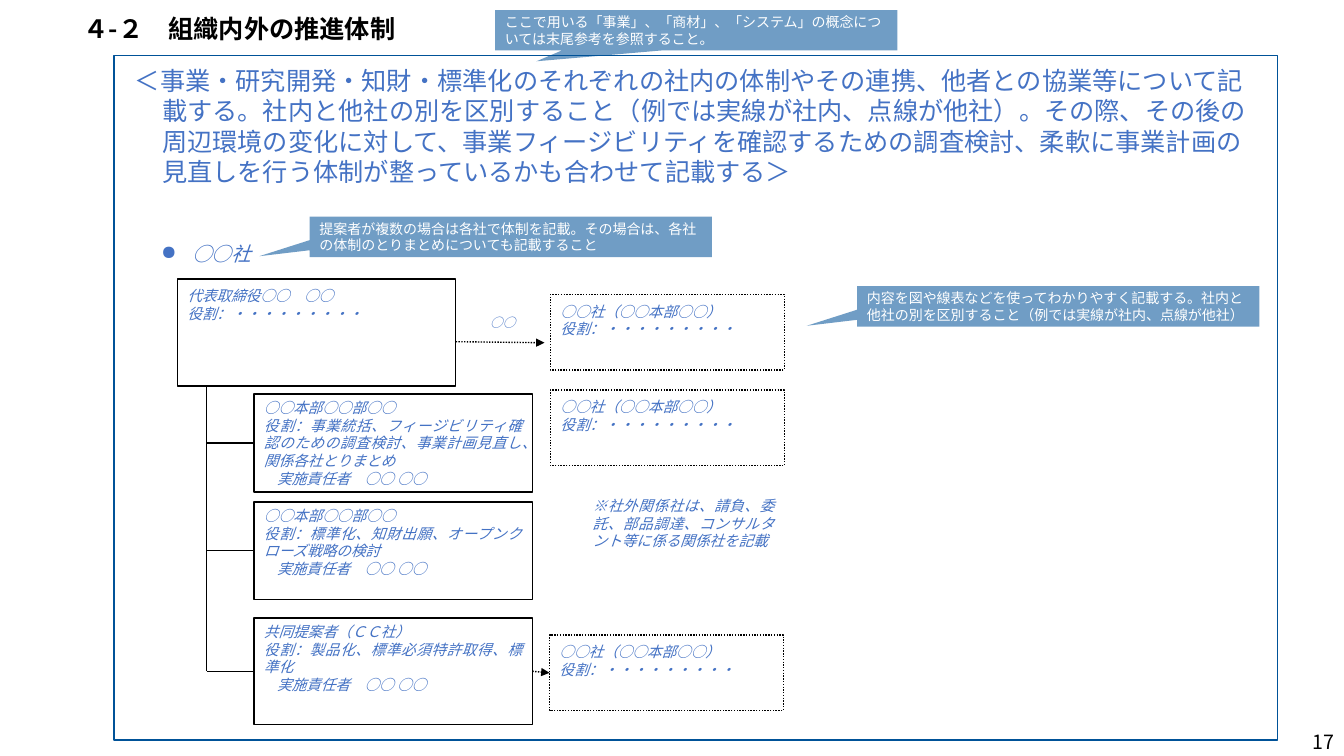
from lxml import etree
from pptx import Presentation, util as u
from pptx.dml.color import RGBColor
from pptx.enum import dml, shapes, text
from pptx.oxml.ns import qn

COLORS = {"ink": "000000", "paper": "FFFFFF", "guide": "4472C4", "navy": "005298"}
JAPANESE = "Noto Sans CJK JP"
LEFT, CENTER, RIGHT, JUSTIFY = (
    text.PP_ALIGN.LEFT, text.PP_ALIGN.CENTER, text.PP_ALIGN.RIGHT, text.PP_ALIGN.JUSTIFY)
TOP, MIDDLE = text.MSO_ANCHOR.TOP, text.MSO_ANCHOR.MIDDLE


class SlideBuilder:
    def __init__(self, slide):
        self.slide = slide

    def color(self, name):
        return RGBColor.from_string(COLORS[name])

    def style_line(self, line, width, dotted=False):
        line.color.rgb = self.color("ink")
        line.width = u.Pt(width)
        if dotted:
            line.dash_style = dml.MSO_LINE.ROUND_DOT

    def set_text(self, frame, lines, size, color="guide", font=JAPANESE, align=JUSTIFY,
                 anchor=TOP, italic=False, bold=False, top_inset=0.05):
        frame.word_wrap = True
        frame.vertical_anchor = anchor
        frame.margin_top = u.Inches(top_inset)
        frame.text = "\n".join(lines)
        for paragraph in frame.paragraphs:
            paragraph.alignment = align
            paragraph.font.size = u.Pt(size)
            paragraph.font.italic = italic
            paragraph.font.bold = bold
            paragraph.font.color.rgb = self.color(color)
            paragraph.font.name = font
            defaults = paragraph._p.get_or_add_pPr().find(qn("a:defRPr"))
            etree.SubElement(defaults, qn("a:ea"), typeface=JAPANESE)

    def indent(self, paragraph, margin, first, bullet=None):
        props = paragraph._p.get_or_add_pPr()
        props.set("marL", str(u.Inches(margin)))
        props.set("indent", str(u.Inches(first)))
        if bullet:
            mark = etree.Element(qn("a:buChar"), char=bullet)
            props.find(qn("a:defRPr")).addprevious(mark)

    def label(self, at, content, size, **style):
        box = self.slide.shapes.add_textbox(*map(u.Inches, at))
        self.set_text(box.text_frame, [content], size, **style)
        return box.text_frame.paragraphs[0]

    def shape(self, kind, at):
        shape = self.slide.shapes.add_shape(kind, *map(u.Inches, at))
        shape.shadow.inherit = False
        return shape

    def outline(self, at):
        frame = self.shape(shapes.MSO_SHAPE.RECTANGLE, at)
        frame.fill.background()
        frame.line.color.rgb = self.color("navy")
        frame.line.width = u.Pt(1)

    def box(self, at, lines, dotted=False, filled=False, top_inset=0.08):
        box = self.shape(shapes.MSO_SHAPE.RECTANGLE, at)
        if filled:
            box.fill.solid()
            box.fill.fore_color.rgb = self.color("paper")
        else:
            box.fill.background()
        self.style_line(box.line, 1, dotted)
        self.set_text(box.text_frame, lines, 10.5, italic=True, top_inset=top_inset)
        return box

    def department(self, top, height, name, role):
        lines = [name, role, "実施責任者　○○ ○○"]
        box = self.box((2.52, top, 2.76, height), lines, filled=True, top_inset=0.05)
        self.indent(box.text_frame.paragraphs[-1], 0, 0.13)
        return box

    def outside_company(self, left, top):
        lines = ["○○社（○○本部○○）", "役割：・・・・・・・・・"]
        return self.box((left, top, 2.32, 0.75), lines, dotted=True)

    def callout(self, left, top, tip, content):
        callout = self.shape(shapes.MSO_SHAPE.RECTANGULAR_CALLOUT, (left, top, 3.99, 0.4))
        callout.adjustments[0], callout.adjustments[1] = tip
        callout.fill.solid()
        callout.fill.fore_color.rgb = self.color("navy")
        tint = callout._element.spPr.find(qn("a:solidFill"))[0]
        etree.SubElement(tint, qn("a:alpha"), val="56000")
        callout.line.fill.background()
        self.set_text(callout.text_frame, [content], 10, "paper", "Arial", LEFT, MIDDLE)

    def connector(self, start, end, width=0.75, arrow=False):
        line = self.slide.shapes.add_connector(
            shapes.MSO_CONNECTOR.STRAIGHT, *map(u.Inches, start + end))
        self.style_line(line.line, width, arrow)
        if arrow:
            outline = line._element.spPr.find(qn("a:ln"))
            etree.SubElement(outline, qn("a:tailEnd"), type="triangle")
        etree.SubElement(line._element.spPr, qn("a:effectLst"))
        return line

    def branch(self, trunk, department):
        middle = (department.top + department.height / 2) / u.Inches(1)
        line = self.connector((trunk, middle), (2.52, middle))
        line.end_connect(department, 1)


def main():
    deck = Presentation()
    deck.slide_width, deck.slide_height = u.Inches(13.33), u.Inches(7.5)
    page = SlideBuilder(deck.slides.add_slide(deck.slide_layouts[6]))

    page.label((12.48, 7.21, 0.85, 0.29), "17", 14, color="ink", align=RIGHT, anchor=MIDDLE)
    instruction = page.label(
        (0.45, 0.6, 12.21, 1.31),
        "＜事業・研究開発・知財・標準化のそれぞれの社内の体制やその連携、他者との協業等について"
        "記載する。社内と他社の別を区別すること（例では実線が社内、点線が他社）。その際、その後の"
        "周辺環境の変化に対して、事業フィージビリティを確認するための調査検討、柔軟に事業計画の"
        "見直しを行う体制が整っているかも合わせて記載する＞", 18, align=LEFT)
    instruction.space_before = u.Pt(6)
    page.indent(instruction, 1.06, -0.27)
    page.callout(8.5, 2.84, (-0.625, 0.481),
                 "内容を図や線表などを使ってわかりやすく記載する。社内と他社の別を区別すること"
                 "（例では実線が社内、点線が他社）")
    page.outline((1.13, 0.55, 11.54, 6.79))

    page.box((1.76, 2.77, 2.76, 1.06), ["代表取締役○○　○○", "役割：・・・・・・・・・"])
    planning = page.department(
        3.91, 0.97, "○○本部○○部○○",
        "役割：事業統括、フィージビリティ確認のための調査検討、事業計画見直し、関係各社とりまとめ")
    standards = page.department(
        4.98, 0.97, "○○本部○○部○○",
        "役割：標準化、知財出願、オープンクローズ戦略の検討")
    partner = page.department(
        6.13, 1.06, "共同提案者（ＣＣ社）",
        "役割：製品化、標準必須特許取得、標準化")

    trunk = 2.05
    page.connector((trunk, 3.83), (trunk, 6.66))
    for department in (planning, standards, partner):
        page.branch(trunk, department)

    for top in (2.92, 3.87):
        page.outside_company(5.46, top)
    supplier = page.outside_company(5.45, 6.3)
    page.connector((4.52, 3.39), (5.4, 3.4), 1, arrow=True)
    supply = page.connector((5.28, 6.66), (5.45, 6.67), 1, arrow=True)
    supply.begin_connect(partner, 3)
    supply.end_connect(supplier, 1)

    page.label((4.53, 3.05, 0.91, 0.3), "○○", 9, align=CENTER, anchor=MIDDLE, italic=True)
    company = page.label((1.5, 2.35, 1.43, 0.34), "○○社", 14, italic=True)
    page.indent(company, 0.31, -0.31, "●")
    page.callout(3.07, 2.15, (-0.625, 0.481),
                 "提案者が複数の場合は各社で体制を記載。その場合は、各社の体制のとりまとめについても"
                 "記載すること")
    page.callout(4.91, 0.1, (-0.397, 0.771),
                 "ここで用いる「事業」、「商材」、「システム」の概念については末尾参考を参照すること。")
    title = page.label((0.73, 0.11, 11.5, 0.38), "４-２　組織内外の推進体制", 18,
                       color="ink", align=LEFT, anchor=MIDDLE, bold=True)
    title.line_spacing = 0.9
    page.label((5.78, 4.88, 2, 0.86),
               "※社外関係社は、請負、委託、部品調達、コンサルタント等に係る関係社を記載",
               10.5, italic=True)
    deck.save("out.pptx")


if __name__ == "__main__":
    main()
